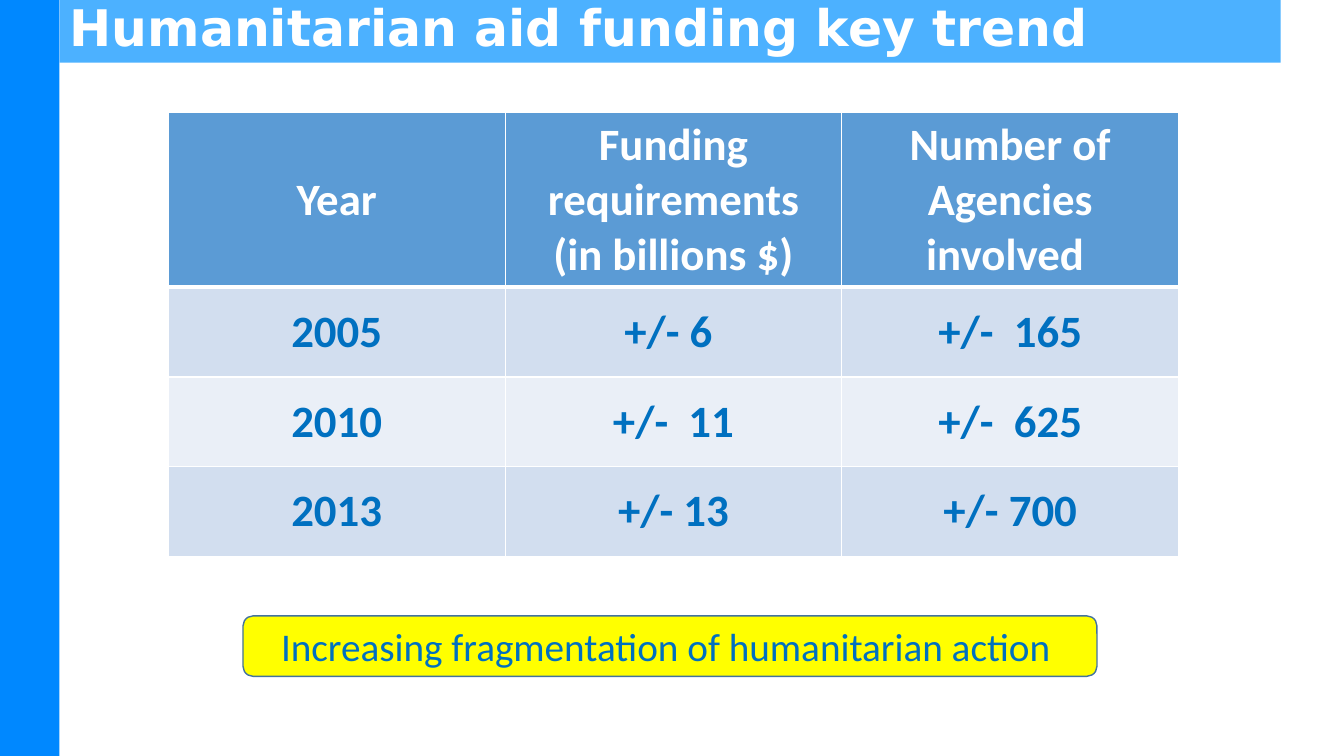
"""Build a slide with a funding trend table and a highlighted conclusion."""
from dataclasses import dataclass

from lxml.etree import SubElement
from pptx import Presentation
from pptx.dml.color import RGBColor
from pptx.enum.shapes import MSO_SHAPE as Shape
from pptx.enum.text import MSO_ANCHOR as Anchor, MSO_AUTO_SIZE as AutoSize, PP_ALIGN as Align
from pptx.oxml.ns import qn
from pptx.util import Inches, Pt

COLORS = {
    "side": "0088FF", "banner": "0091FF", "header": "5B9BD5",
    "band": "D2DEEF", "light_band": "EAEFF7", "white": "FFFFFF",
    "text": "0070C0", "callout": "FFFF00", "callout_line": "43739E",
}
WIDTH, HEIGHT = Inches(13.33), Inches(7.5)
ROWS = [
    ["Year", "Funding requirements\n(in billions $)", "Number of Agencies involved "],
    ["2005", "+/- 6 ", "+/-  165"],
    ["2010", "+/-  11", "+/-  625"],
    ["2013", "+/- 13", "+/- 700"],
]
HEADER_HEIGHT, ROW_HEIGHT = 22.8, 11.87


@dataclass
class Box:
    """Place on the slide, in percent of its width and height."""
    left: float
    top: float
    width: float
    height: float

    def emu(self) -> tuple:
        """Return left, top, width and height as lengths."""
        return share_x(self.left), share_y(self.top), share_x(self.width), share_y(self.height)


def share_x(percent: float) -> int:
    """Return a percentage of the slide's width."""
    return int(WIDTH * percent / 100)


def share_y(percent: float) -> int:
    """Return a percentage of the slide's height."""
    return int(HEIGHT * percent / 100)


SIDE = Box(0, 0, 4.43, 100)
BANNER = Box(4.43, -0.4, 90.85, 8.67)
TABLE = Box(12.53, 14.93, 75.17, HEADER_HEIGHT + ROW_HEIGHT * (len(ROWS) - 1))
CALLOUT = Box(18.08, 81.47, 63.54, 8)


def paint(fill, color: str) -> None:
    """Make a fill solid in a named colour."""
    fill.solid()
    fill.fore_color.rgb = RGBColor.from_string(COLORS[color])


def write(tf, text: str, *, size: float, color: str, font: str = "Calibri",
          bold: bool = False, align=Align.CENTER, spacing: float = 1.0) -> None:
    """Fill a text frame with one formatted paragraph per line."""
    tf.text = text
    for p in tf.paragraphs:
        p.alignment = align
        p.line_spacing = spacing
        for r in p.runs:
            r.font.name, r.font.size, r.font.bold = font, Pt(size), bold
            r.font.color.rgb = RGBColor.from_string(COLORS[color])


def add_box(s, kind, box: Box, color: str):
    """Add a filled shape without shadow or outline."""
    sp = s.shapes.add_shape(kind, *box.emu())
    sp.shadow.inherit = False
    paint(sp.fill, color)
    sp.line.fill.background()
    return sp


def add_borders(cell, widths: dict) -> None:
    """Draw white cell borders with the given widths in points."""
    tc_pr = cell._tc.get_or_add_tcPr()
    for side, width in widths.items():
        ln = SubElement(tc_pr, qn(f"a:ln{side}"), w=str(Pt(width)))
        SubElement(SubElement(ln, qn("a:solidFill")), qn("a:srgbClr"), val=COLORS["white"])


def add_title(s) -> None:
    """Turn the title placeholder into the translucent banner."""
    sp = s.shapes.title
    sp.left, sp.top, sp.width, sp.height = BANNER.emu()
    paint(sp.fill, "banner")
    banner_color = sp._element.spPr.find(f".//{qn('a:srgbClr')}")
    SubElement(banner_color, qn("a:alpha"), val="70000")
    tf = sp.text_frame
    write(tf, "Humanitarian aid funding key trend", size=36, color="white",
          font="DejaVu Sans", bold=True, align=Align.LEFT, spacing=0.9)
    tf.auto_size, tf.vertical_anchor = AutoSize.NONE, Anchor.MIDDLE


def add_funding_table(s) -> None:
    """Add the table of yearly funding and agencies."""
    table = s.shapes.add_table(len(ROWS), len(ROWS[0]), *TABLE.emu()).table
    for i, values in enumerate(ROWS):
        table.rows[i].height = share_y(ROW_HEIGHT if i else HEADER_HEIGHT)
        fill = "header" if i == 0 else "band" if i % 2 else "light_band"
        for j, value in enumerate(values):
            cell = table.cell(i, j)
            add_borders(cell, {"L": 1, "R": 1, "T": 3 if i == 1 else 1, "B": 1 if i else 3})
            paint(cell.fill, fill)
            cell.vertical_anchor = Anchor.MIDDLE
            write(cell.text_frame, value, size=32, bold=True, color="text" if i else "white")


def add_callout(s) -> None:
    """Add the highlighted conclusion under the table."""
    sp = add_box(s, Shape.ROUNDED_RECTANGLE, CALLOUT, "callout")
    paint(sp.line.fill, "callout_line")
    sp.line.width = Pt(1)
    sp.text_frame.vertical_anchor = Anchor.MIDDLE
    write(sp.text_frame, "Increasing fragmentation of humanitarian action ", size=28, color="text")


def main() -> None:
    """Create and save the presentation."""
    prs = Presentation()
    prs.slide_width, prs.slide_height = WIDTH, HEIGHT
    s = prs.slides.add_slide(prs.slide_layouts[5])
    add_box(s, Shape.RECTANGLE, SIDE, "side")
    add_title(s)
    add_funding_table(s)
    add_callout(s)
    prs.save("out.pptx")


if __name__ == "__main__":
    main()
